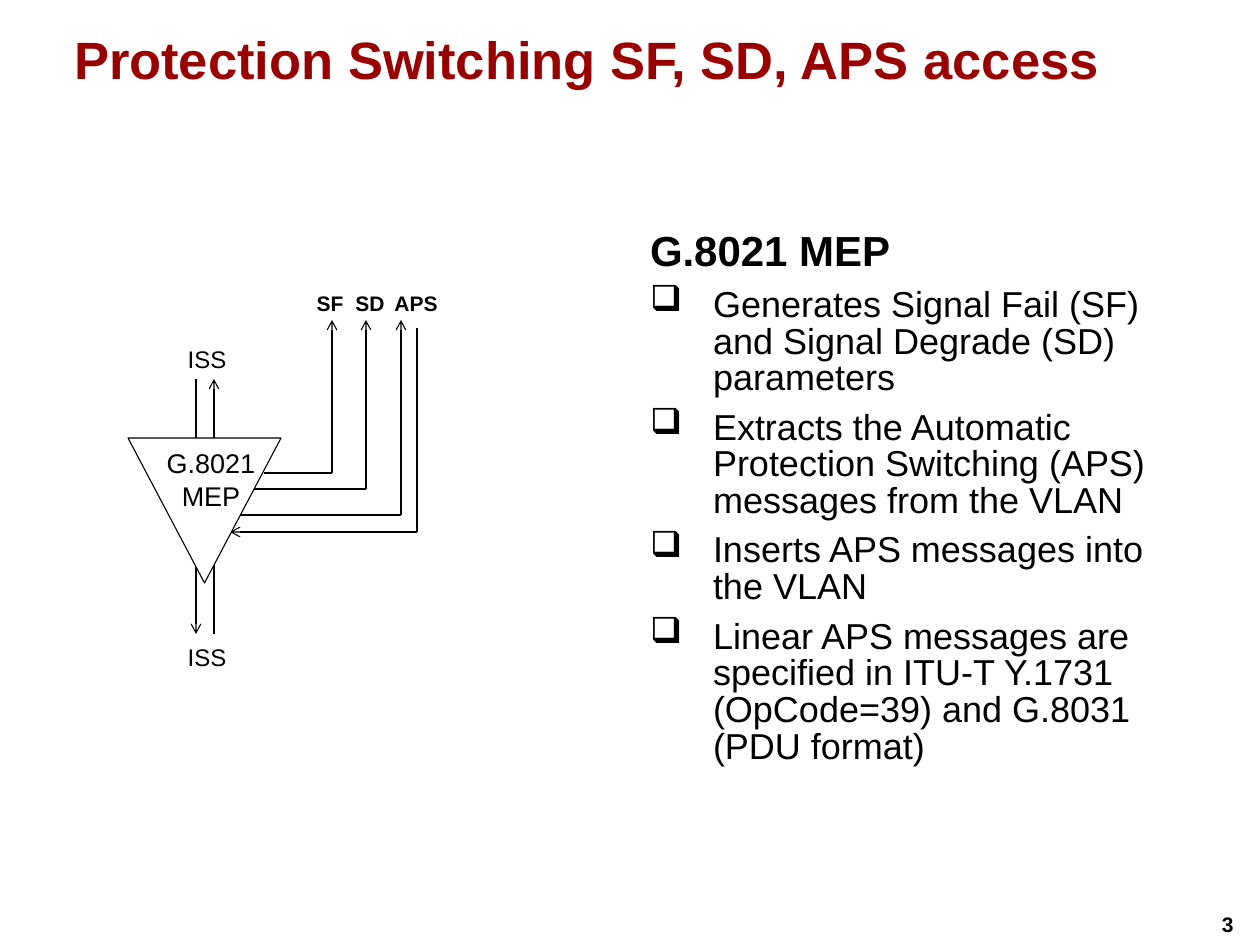
from lxml.etree import SubElement
from pptx import Presentation
from pptx.dml.color import RGBColor
from pptx.enum.shapes import MSO_CONNECTOR, MSO_SHAPE
from pptx.enum.text import MSO_ANCHOR, PP_ALIGN
from pptx.oxml.ns import qn
from pptx.util import Inches, Pt

FONT = "Arial"
BLACK, WHITE, RED = "000000", "FFFFFF", "990000"

TITLE = "Protection Switching SF, SD, APS access"
HEADING = "G.8021 MEP"
BULLETS = [
    "Generates Signal Fail (SF) and Signal Degrade (SD) parameters",
    "Extracts the Automatic Protection Switching (APS) messages from the VLAN",
    "Inserts APS messages into the VLAN",
    "Linear APS messages are specified in ITU-T Y.1731 (OpCode=39) and G.8031 (PDU format)",
]
PAGE_NUMBER = "3"

# Lengths in px: left, top, width, height
TITLE_BOX = (63, 22, 1134, 119)
BODY_BOX = (639, 220, 558, 623)
NUMBER_BOX = (1212, 906, 48, 37)
TRIANGLE_BOX = (128, 438, 153, 145)
MEP_BOX = (166, 447, 90, 66)
BULLET_INDENT = 63

ISS_LABEL_TOPS = (345, 643)
ISS_TOP, ISS_BOTTOM = 379, 634
ISS_DOWN_X, ISS_UP_X = 196, 214
SIGNAL_LABELS = [("SF", 330), ("SD", 370), ("APS", 416)]  # text, centre x
SIGNAL_LABEL_TOP = 285
OUTPUT_TOP = 320
OUTPUTS = [(264, 332, 473), (248, 366, 489), (239, 401, 515)]  # start x, turn x, y
APS_INPUT = [(417, 328), (417, 532), (230, 532)]


def px(length):
    return round(Inches(length) / 108)


def color(hex_code):
    return RGBColor.from_string(hex_code)


def write(paragraph, text, size, bold=False, hex_code=BLACK, align=PP_ALIGN.LEFT,
          before=0, spacing=1.0):
    paragraph.alignment = align
    paragraph.space_before = Pt(before)
    paragraph.line_spacing = spacing
    run = paragraph.add_run()
    run.text = text
    run.font.name = FONT
    run.font.size = Pt(size)
    run.font.bold = bold
    run.font.color.rgb = color(hex_code)


def set_frame(frame, wrap=True, inset=(11, 5)):
    frame.word_wrap = wrap
    frame.vertical_anchor = MSO_ANCHOR.TOP
    frame.margin_left = frame.margin_right = px(inset[0])
    frame.margin_top = frame.margin_bottom = px(inset[1])
    return frame


def add_text(slide, box, lines, size, **style):
    """Add a tight, unwrapped label with one paragraph per line."""
    shape = slide.shapes.add_textbox(*map(px, box))
    frame = set_frame(shape.text_frame, wrap=False, inset=(0, 0))
    for index, line in enumerate(lines):
        paragraph = frame.add_paragraph() if index else frame.paragraphs[0]
        write(paragraph, line, size, **style)


def add_bullet(paragraph):
    properties = paragraph._p.get_or_add_pPr()
    properties.set("marL", str(px(BULLET_INDENT)))
    properties.set("indent", str(-px(BULLET_INDENT)))
    SubElement(properties, qn("a:buChar")).set("char", "❑")


def add_path(slide, points):
    """Join the points with straight lines and put an arrowhead on the last."""
    for start, end in zip(points, points[1:]):
        connector = slide.shapes.add_connector(
            MSO_CONNECTOR.STRAIGHT, *map(px, start + end))
        connector.line.color.rgb = color(BLACK)
        connector.line.width = Pt(0.75)
        if end == points[-1]:
            line = connector.line._get_or_add_ln()
            SubElement(line, qn("a:tailEnd")).set("type", "arrow")
        SubElement(connector._element.spPr, qn("a:effectLst"))


def add_title(slide):
    title = slide.shapes.title
    title.left, title.top, title.width, title.height = map(px, TITLE_BOX)
    frame = set_frame(title.text_frame)
    write(frame.paragraphs[0], TITLE, 35, bold=True, hex_code=RED)


def add_body(slide):
    shape = slide.shapes.add_textbox(*map(px, BODY_BOX))
    frame = set_frame(shape.text_frame)
    write(frame.paragraphs[0], HEADING, 28, bold=True)
    for text in BULLETS:
        paragraph = frame.add_paragraph()
        write(paragraph, text, 24, before=8.4, spacing=0.85)
        add_bullet(paragraph)


def add_diagram(slide):
    add_path(slide, [(ISS_DOWN_X, ISS_TOP), (ISS_DOWN_X, ISS_BOTTOM)])
    add_path(slide, [(ISS_UP_X, ISS_BOTTOM), (ISS_UP_X, ISS_TOP)])
    for start_x, turn_x, y in OUTPUTS:
        add_path(slide, [(start_x, y), (turn_x, y), (turn_x, OUTPUT_TOP)])
    add_path(slide, APS_INPUT)

    triangle = slide.shapes.add_shape(
        MSO_SHAPE.ISOSCELES_TRIANGLE, *map(px, TRIANGLE_BOX))
    triangle.rotation = 180
    triangle.shadow.inherit = False
    triangle.fill.solid()
    triangle.fill.fore_color.rgb = color(WHITE)
    triangle.line.color.rgb = color(BLACK)
    triangle.line.width = Pt(0.75)

    add_text(slide, MEP_BOX, HEADING.split(), 18, align=PP_ALIGN.CENTER)
    for top in ISS_LABEL_TOPS:
        add_text(slide, (187, top, 40, 29), ["ISS"], 16, align=PP_ALIGN.CENTER)
    for text, center in SIGNAL_LABELS:
        add_text(slide, (center - 22, SIGNAL_LABEL_TOP + 6, 44, 25), [text], 14,
                 bold=True, align=PP_ALIGN.CENTER)


def main():
    presentation = Presentation()
    presentation.slide_width, presentation.slide_height = px(1260), px(945)
    slide = presentation.slides.add_slide(presentation.slide_layouts[5])
    add_title(slide)
    add_body(slide)
    add_diagram(slide)
    left, top, width, height = NUMBER_BOX
    add_text(slide, (left + 10, top + 6, width - 36, height - 12), [PAGE_NUMBER], 14,
             bold=True)
    presentation.save("out.pptx")


if __name__ == "__main__":
    main()
